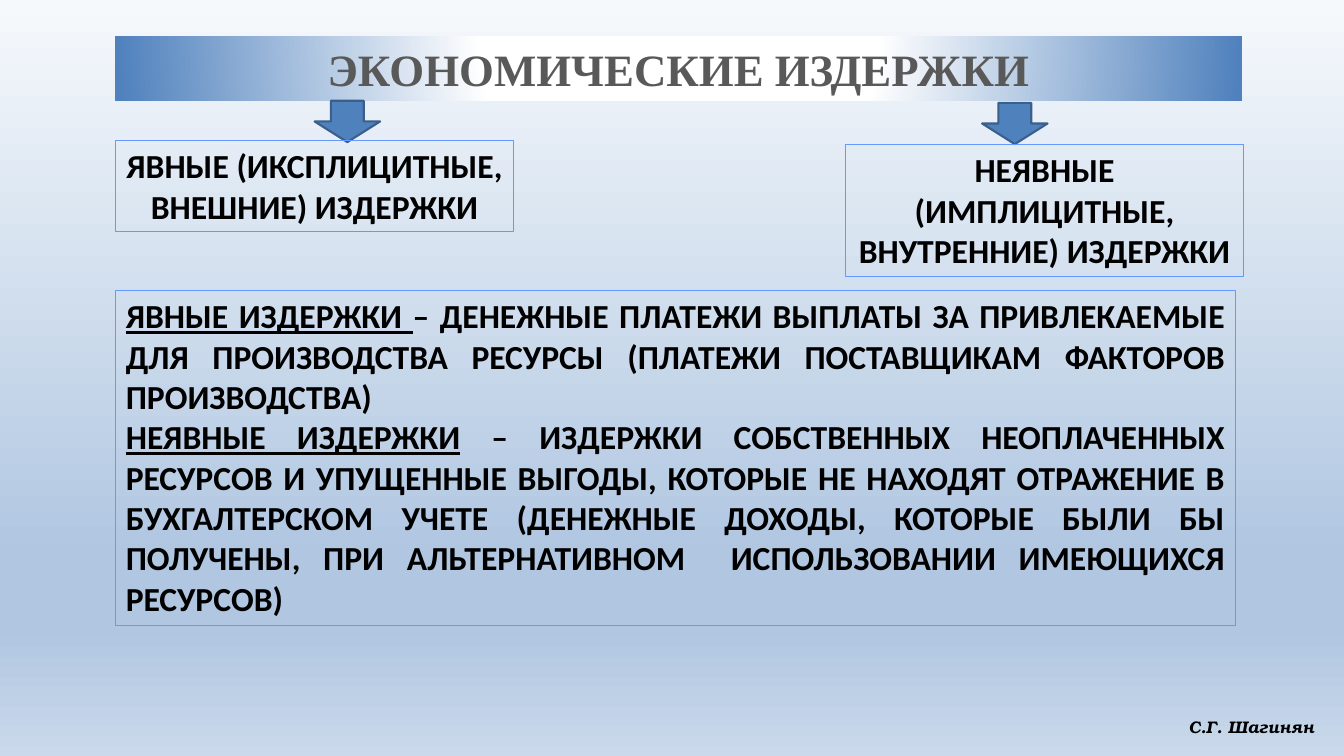
from dataclasses import dataclass

from pptx import Presentation
from pptx import util as u
from pptx.dml.color import RGBColor
from pptx.enum import shapes, text
from pptx.oxml import parse_xml
from pptx.oxml.ns import nsdecls, qn


@dataclass(frozen=True)
class Theme:
    sky: tuple = ((0, "F6F9FC"), (74, "B0C6E1"), (83, "B0C6E1"), (100, "CAD9EB"))
    banner: tuple = ((0, "FFFFFF"), (35, "FFFFFF"), (100, "4F81BD"))
    title_ink: str = "595959"
    ink: str = "000000"
    arrow: str = "4F81BD"
    arrow_edge: str = "3A5F8C"
    frame: str = "6699FF"
    title_font: str = "Times New Roman"
    body_font: str = "Calibri"
    author_font: str = "TeX Gyre Bonum"
    title_size: int = 32
    body_size: int = 24
    author_size: int = 12


THEME = Theme()
DOWNWARD = '<a:lin ang="5400000" scaled="0"/>'
FROM_CENTRE = ('<a:path path="circle">'
               '<a:fillToRect l="50000" t="-80000" r="50000" b="180000"/></a:path>')


def place(shape, left, top, width, height):
    shape.left, shape.top = u.Inches(left), u.Inches(top)
    shape.width, shape.height = u.Inches(width), u.Inches(height)


def set_gradient(filled, element, stops, direction):
    """Give a shape or background a gradient of several stops."""
    filled.fill.solid()
    solid = next(element.iter(qn("a:solidFill")))
    marks = "".join(f'<a:gs pos="{pos * 1000}"><a:srgbClr val="{color}"/></a:gs>'
                    for pos, color in stops)
    gradient = parse_xml(f'<a:gradFill {nsdecls("a")} rotWithShape="1">'
                         f'<a:gsLst>{marks}</a:gsLst>{direction}</a:gradFill>')
    solid.getparent().replace(solid, gradient)


def format_span(span, font, size, color):
    span.font.name = font
    span.font.size = u.Pt(size)
    span.font.bold = True
    span.font.color.rgb = RGBColor.from_string(color)


def add_title(slide, wording, *bounds):
    title = slide.shapes.title
    place(title, *bounds)
    set_gradient(title, title.element.spPr, THEME.banner, FROM_CENTRE)
    frame = title.text_frame
    frame.text = wording
    frame.auto_size = text.MSO_AUTO_SIZE.NONE
    frame.vertical_anchor = text.MSO_ANCHOR.MIDDLE
    para = frame.paragraphs[0]
    para.alignment = text.PP_ALIGN.CENTER
    format_span(para.runs[0], THEME.title_font, THEME.title_size, THEME.title_ink)


def add_arrow(slide, left, top):
    arrow = slide.shapes.add_shape(
        shapes.MSO_SHAPE.DOWN_ARROW,
        u.Inches(left), u.Inches(top), u.Inches(0.65), u.Inches(0.41))
    arrow.shadow.inherit = False
    arrow.fill.solid()
    arrow.fill.fore_color.rgb = RGBColor.from_string(THEME.arrow)
    arrow.line.color.rgb = RGBColor.from_string(THEME.arrow_edge)
    arrow.line.width = u.Pt(1.5)


def add_framed_box(slide, bounds, paragraphs, alignment):
    """Each paragraph is a pair: an underlined term and the plain wording after it."""
    box = slide.shapes.add_shape(shapes.MSO_SHAPE.RECTANGLE, *map(u.Inches, bounds))
    box.shadow.inherit = False
    box.fill.background()
    box.line.color.rgb = RGBColor.from_string(THEME.frame)
    box.line.width = u.Pt(0.75)
    frame = box.text_frame
    frame.word_wrap = True
    frame.vertical_anchor = text.MSO_ANCHOR.TOP
    for index, (term, wording) in enumerate(paragraphs):
        para = frame.add_paragraph() if index else frame.paragraphs[0]
        para.alignment = alignment
        for part, underlined in ((term, True), (wording, False)):
            if part:
                span = para.add_run()
                span.text = part
                format_span(span, THEME.body_font, THEME.body_size, THEME.ink)
                span.font.underline = underlined


def add_author(slide, name, *bounds):
    box = slide.shapes.add_textbox(*map(u.Inches, bounds))
    frame = box.text_frame
    frame.text = name
    frame.word_wrap = False
    frame.auto_size = text.MSO_AUTO_SIZE.SHAPE_TO_FIT_TEXT
    frame.margin_right = 0  # leaves room for the name on one line
    span = frame.paragraphs[0].runs[0]
    format_span(span, THEME.author_font, THEME.author_size, THEME.ink)
    span.font.italic = True


def main():
    deck = Presentation()
    deck.slide_width, deck.slide_height = u.Inches(13.33), u.Inches(7.5)
    slide = deck.slides.add_slide(deck.slide_layouts.get_by_name("Title Only"))
    set_gradient(slide.background, slide.element, THEME.sky, DOWNWARD)

    # Title banner
    add_title(slide, "ЭКОНОМИЧЕСКИЕ ИЗДЕРЖКИ", 1.14, 0.36, 11.18, 0.64)

    # Two kinds of costs, each under its arrow
    center = text.PP_ALIGN.CENTER
    add_arrow(slide, 3.12, 1)
    add_framed_box(slide, (1.15, 1.39, 3.94, 0.91),
                   [("", "ЯВНЫЕ (ИКСПЛИЦИТНЫЕ, ВНЕШНИЕ) ИЗДЕРЖКИ")], center)
    add_arrow(slide, 9.74, 1.02)
    add_framed_box(slide, (8.39, 1.43, 3.94, 1.31),
                   [("", "НЕЯВНЫЕ (ИМПЛИЦИТНЫЕ, ВНУТРЕННИЕ) ИЗДЕРЖКИ")], center)

    # Definitions
    definitions = [
        ("ЯВНЫЕ ИЗДЕРЖКИ ",
         "– ДЕНЕЖНЫЕ ПЛАТЕЖИ ВЫПЛАТЫ ЗА ПРИВЛЕКАЕМЫЕ ДЛЯ ПРОИЗВОДСТВА РЕСУРСЫ "
         "(ПЛАТЕЖИ ПОСТАВЩИКАМ ФАКТОРОВ ПРОИЗВОДСТВА)"),
        ("НЕЯВНЫЕ ИЗДЕРЖКИ",
         " – ИЗДЕРЖКИ СОБСТВЕННЫХ НЕОПЛАЧЕННЫХ РЕСУРСОВ И УПУЩЕННЫЕ ВЫГОДЫ, "
         "КОТОРЫЕ НЕ НАХОДЯТ ОТРАЖЕНИЕ В БУХГАЛТЕРСКОМ УЧЕТЕ (ДЕНЕЖНЫЕ ДОХОДЫ, "
         "КОТОРЫЕ БЫЛИ БЫ ПОЛУЧЕНЫ, ПРИ АЛЬТЕРНАТИВНОМ  ИСПОЛЬЗОВАНИИ "
         "ИМЕЮЩИХСЯ РЕСУРСОВ)"),
    ]
    add_framed_box(slide, (1.15, 2.88, 11.1, 3.33), definitions, text.PP_ALIGN.JUSTIFY)

    # Author
    add_author(slide, "С.Г. Шагинян", 11.69, 7.06, 1.44, 0.3)
    deck.save("out.pptx")


if __name__ == "__main__":
    main()
